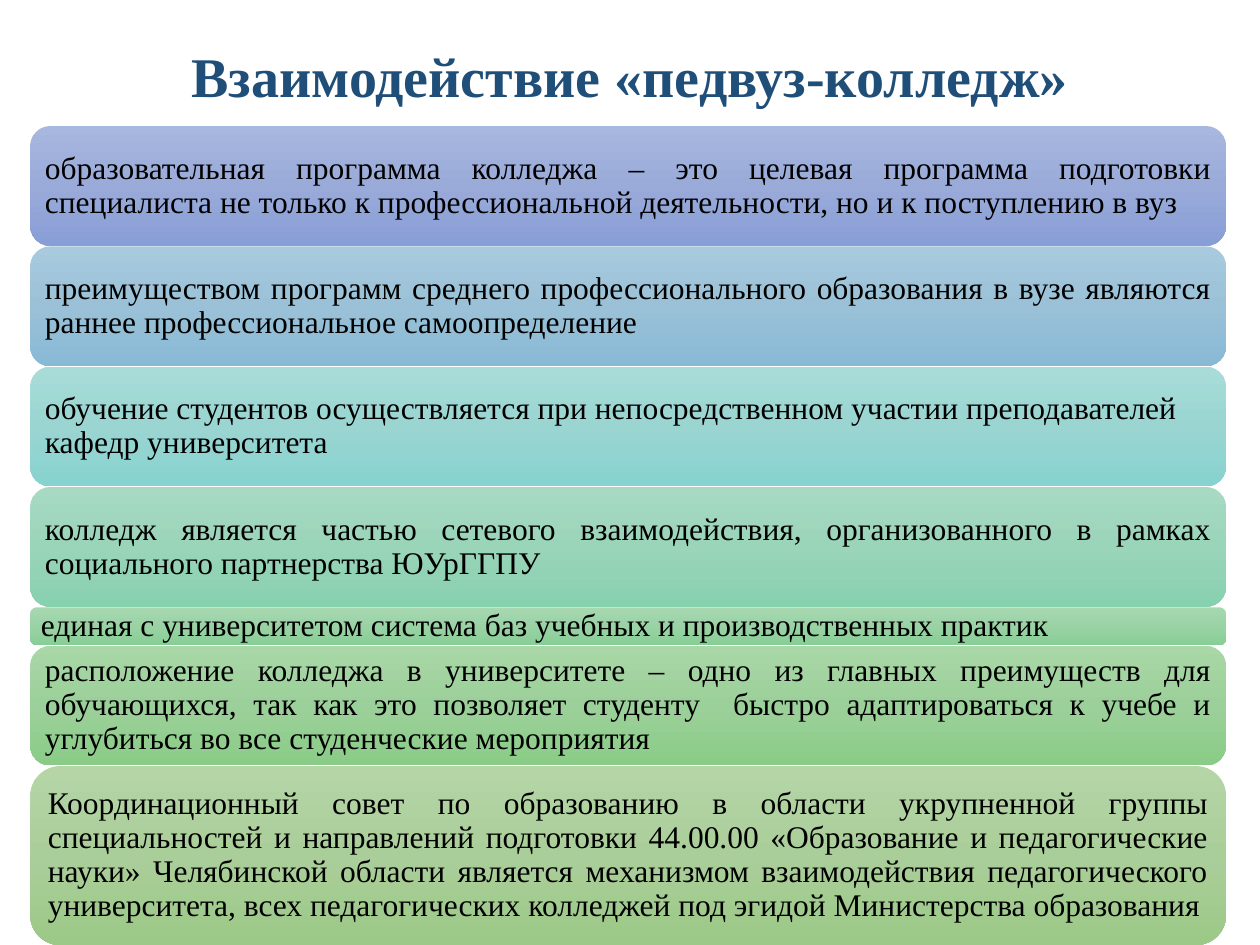
"""Build the slide on how the university and the college work together."""
from copy import deepcopy

from pptx import Presentation
from pptx.dml.color import RGBColor
from pptx.enum.shapes import MSO_SHAPE as Shape
from pptx.enum.text import MSO_ANCHOR as Anchor, PP_ALIGN as Align
from pptx.util import Inches, Pt

FONT = "Times New Roman"
NAVY = RGBColor(0x1F, 0x4E, 0x79)
BLACK = RGBColor(0x00, 0x00, 0x00)
INDIGO = [RGBColor(0xA8, 0xB7, 0xDF), RGBColor(0x9A, 0xAB, 0xD9), RGBColor(0x88, 0x9E, 0xD7)]
BLUE = [RGBColor(0xA8, 0xCA, 0xDE), RGBColor(0x9A, 0xC1, 0xD7), RGBColor(0x88, 0xB9, 0xD5)]
TEAL = [RGBColor(0xA8, 0xDC, 0xD9), RGBColor(0x9A, 0xD5, 0xD2), RGBColor(0x87, 0xD3, 0xCF)]
MINT = [RGBColor(0xA8, 0xDA, 0xC3), RGBColor(0x9A, 0xD4, 0xB9), RGBColor(0x87, 0xD1, 0xAF)]
JADE = [RGBColor(0xA7, 0xD8, 0xB1), RGBColor(0x9A, 0xD2, 0xA5), RGBColor(0x87, 0xCE, 0x96)]
GREEN = [RGBColor(0xA9, 0xD7, 0xA7), RGBColor(0x9C, 0xD0, 0x9A), RGBColor(0x8A, 0xCC, 0x87)]
OLIVE = [RGBColor(0xB5, 0xD5, 0xA7), RGBColor(0xAA, 0xCE, 0x9A), RGBColor(0x9C, 0xC9, 0x87)]


def write(frame, text, size, color, align, bold=False):
    frame.word_wrap = True
    para = frame.paragraphs[0]
    para.alignment = align
    para.line_spacing = 0.9
    run = para.add_run()
    run.text = text
    run.font.name = FONT
    run.font.size = Pt(size)
    run.font.bold = bold
    run.font.color.rgb = color


def shade(fill, colors):
    fill.gradient()
    fill.gradient_angle = 270
    first = fill._fill._gradFill.gsLst[0]
    first.addnext(deepcopy(first))
    for stop, color, place in zip(fill.gradient_stops, colors, (0, 0.5, 1)):
        stop.color.rgb = color
        stop.position = place


deck = Presentation()
deck.slide_width = Inches(10)
deck.slide_height = Inches(7.5)
slide = deck.slides.add_slide(deck.slide_layouts[6])

title = slide.shapes.add_textbox(Inches(0.69), Inches(0.22), Inches(8.62), Inches(1.27))
title.text_frame.margin_top = Inches(0.17)
write(title.text_frame, "Взаимодействие «педвуз-колледж»", 32, NAVY, Align.CENTER, True)

bars = [
    (0.95, INDIGO, Align.JUSTIFY, "образовательная программа колледжа – это целевая программа "
     "подготовки специалиста не только к профессиональной деятельности, но и к поступлению в вуз"),
    (0.95, BLUE, Align.JUSTIFY, "преимуществом программ среднего профессионального образования "
     "в вузе являются раннее профессиональное самоопределение"),
    (0.95, TEAL, Align.LEFT, "обучение студентов осуществляется при непосредственном участии "
     "преподавателей кафедр университета"),
    (0.95, MINT, Align.JUSTIFY, "колледж является частью сетевого взаимодействия, "
     "организованного в рамках социального партнерства ЮУрГГПУ"),
    (0.3, JADE, Align.JUSTIFY, "единая с университетом система баз учебных и "
     "производственных практик"),
    (0.95, GREEN, Align.JUSTIFY, "расположение колледжа в университете – одно из главных "
     "преимуществ для обучающихся, так как это позволяет студенту  быстро адаптироваться к учебе "
     "и углубиться во все студенческие мероприятия"),
    (1.42, OLIVE, Align.JUSTIFY, "Координационный совет по образованию в области укрупненной "
     "группы специальностей и направлений подготовки 44.00.00 «Образование и педагогические "
     "науки» Челябинской области является механизмом взаимодействия педагогического "
     "университета, всех педагогических колледжей под эгидой Министерства образования"),
]

gap = Inches(0.01) // 2
top = Inches(1)
for height, colors, align, text in bars:
    bar = slide.shapes.add_shape(
        Shape.ROUNDED_RECTANGLE, Inches(0.24), top, Inches(9.49), Inches(height))
    bar.shadow.inherit = False
    bar.line.fill.background()
    shade(bar.fill, colors)
    frame = bar.text_frame
    frame.vertical_anchor = Anchor.MIDDLE
    frame.margin_left = frame.margin_right = Inches(0.07)
    frame.margin_top = frame.margin_bottom = Inches(0.07)
    write(frame, text, 18, BLACK, align)
    top += Inches(height) + gap

deck.save("out.pptx")
